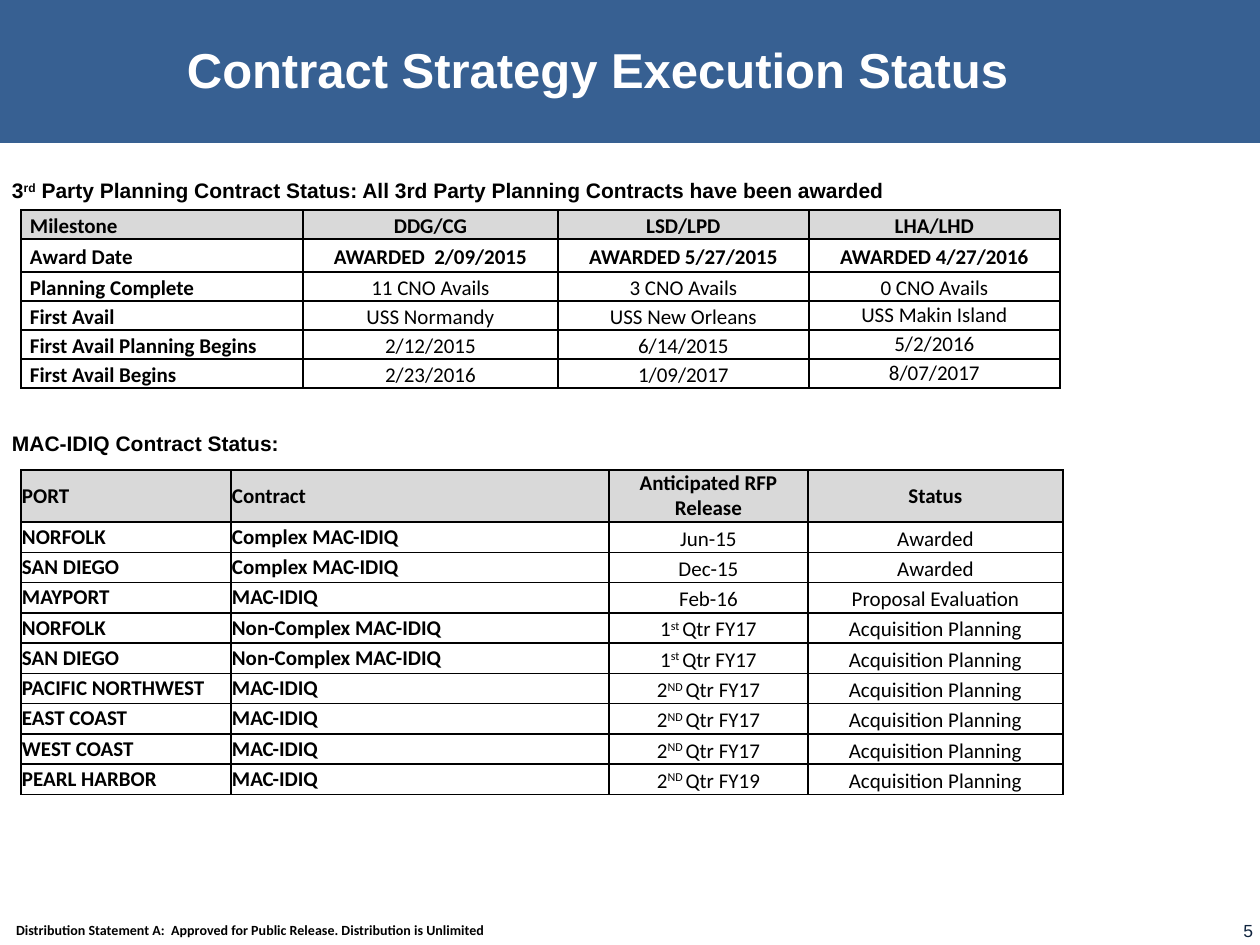
from lxml import etree
from pptx import Presentation
from pptx import util as u
from pptx.dml.color import RGBColor
from pptx.enum import shapes, text
from pptx.oxml.ns import qn

SCALE = 914400 / 126  # EMU per px
BLUE, NAVY, GREY, WHITE, BLACK = "376092", "0F243E", "D9D9D9", "FFFFFF", "000000"
LEFT, CENTER, RIGHT = text.PP_ALIGN.LEFT, text.PP_ALIGN.CENTER, text.PP_ALIGN.RIGHT
TOP, MIDDLE, BOTTOM = text.MSO_ANCHOR.TOP, text.MSO_ANCHOR.MIDDLE, text.MSO_ANCHOR.BOTTOM

PLANNING = [
    ["Milestone", "DDG/CG", "LSD/LPD", "LHA/LHD"],
    ["Award Date", "AWARDED  2/09/2015", "AWARDED 5/27/2015", "AWARDED 4/27/2016"],
    ["Planning Complete", "11 CNO Avails", "3 CNO Avails", "0 CNO Avails"],
    ["First Avail", "USS Normandy", "USS New Orleans", "USS Makin Island"],
    ["First Avail Planning Begins", "2/12/2015", "6/14/2015", "5/2/2016"],
    ["First Avail Begins", "2/23/2016", "1/09/2017", "8/07/2017"],
]
MAC_IDIQ = [
    ["PORT", "Contract", "Anticipated RFP Release", "Status"],
    ["NORFOLK", "Complex MAC-IDIQ", "Jun-15", "Awarded"],
    ["SAN DIEGO", "Complex MAC-IDIQ", "Dec-15", "Awarded"],
    ["MAYPORT", "MAC-IDIQ", "Feb-16", "Proposal Evaluation"],
    ["NORFOLK", "Non-Complex MAC-IDIQ", "1^st ^Qtr FY17", "Acquisition Planning"],
    ["SAN DIEGO", "Non-Complex MAC-IDIQ", "1^st ^Qtr FY17", "Acquisition Planning"],
    ["PACIFIC NORTHWEST", "MAC-IDIQ", "2^ND ^Qtr FY17", "Acquisition Planning"],
    ["EAST COAST", "MAC-IDIQ", "2^ND ^Qtr FY17", "Acquisition Planning"],
    ["WEST COAST", "MAC-IDIQ", "2^ND ^Qtr FY17", "Acquisition Planning"],
    ["PEARL HARBOR", "MAC-IDIQ", "2^ND ^Qtr FY19", "Acquisition Planning"],
]


def px(length):
    return u.Emu(round(length * SCALE))


def color(hex_code):
    return RGBColor.from_string(hex_code)


def write(paragraph, words, size=12, font="Calibri", ink=BLACK, bold=False,
          align=LEFT, spacing=1.0, before=0):
    """Fill a paragraph; words between carets are superscript."""
    paragraph.alignment = align
    paragraph.line_spacing = spacing
    paragraph.space_before = u.Pt(before)
    for i, part in enumerate(words.split("^")):
        run = paragraph.add_run()
        run.text = part
        run.font.size, run.font.name, run.font.bold = u.Pt(size), font, bold
        run.font.color.rgb = color(ink)
        if i % 2:
            run._r.get_or_add_rPr().set("baseline", "30000")


def text_frame(slide, box, inset=(12, 6), anchor=TOP):
    frame = slide.shapes.add_textbox(*map(px, box)).text_frame
    frame.word_wrap = True
    frame.vertical_anchor = anchor
    frame.margin_left = frame.margin_right = px(inset[0])
    frame.margin_top = frame.margin_bottom = px(inset[1])
    return frame


def border(cell):
    properties = cell._tc.get_or_add_tcPr()
    for i, side in enumerate(("a:lnL", "a:lnR", "a:lnT", "a:lnB")):
        line = etree.Element(qn(side), w=str(u.Pt(1)))
        fill = etree.SubElement(line, qn("a:solidFill"))
        etree.SubElement(fill, qn("a:srgbClr"), val=BLACK)
        properties.insert(i, line)


def header(slide, box):
    x, y, width, height = box
    band = slide.shapes.add_shape(shapes.MSO_SHAPE.RECTANGLE, *map(px, box))
    band.shadow.inherit = False
    band.fill.solid()
    band.fill.fore_color.rgb = color(BLUE)
    band.line.fill.background()
    title = text_frame(slide, (x + 178, y + 42, width - 178, 60), inset=(9, 4))
    write(title.paragraphs[0], "Contract Strategy Execution Status", size=28,
          font="Arial", ink=WHITE, bold=True, spacing=0.9)


def headings(slide, box):
    frame = text_frame(slide, box)
    style = dict(font="Arial", bold=True)
    write(frame.paragraphs[0], "3^rd^ Party Planning Contract Status: "
          "All 3rd Party Planning Contracts have been awarded", **style)
    write(frame.add_paragraph(), "MAC-IDIQ Contract Status:", before=130, **style)


def status_table(slide, origin, rows, widths, heights, inset, left_columns,
                 bold_rows, is_spaced):
    """Grey header row, bold left-aligned label columns, centred values."""
    box = (*origin, sum(widths), sum(heights))
    table = slide.shapes.add_table(len(rows), len(widths), *map(px, box)).table
    for column, width in zip(table.columns, widths):
        column.width = px(width)
    for r, (row, height) in enumerate(zip(rows, heights)):
        table.rows[r].height = px(height)
        for c, words in enumerate(row):
            cell = table.cell(r, c)
            cell.margin_left = cell.margin_right = px(inset)
            cell.margin_top = cell.margin_bottom = 0
            cell.vertical_anchor = MIDDLE
            cell.fill.solid()
            cell.fill.fore_color.rgb = color(WHITE if r else GREY)
            border(cell)
            is_label = c < left_columns
            write(cell.text_frame.paragraphs[0], words,
                  bold=is_label or r < bold_rows,
                  align=LEFT if is_label else CENTER,
                  spacing=1.15 if is_spaced(r, c) else 1.0)


def footer(slide, box):
    x, y, width, height = box
    statement = text_frame(slide, (x, y, 1218, height), inset=(16, 6), anchor=BOTTOM)
    write(statement.paragraphs[0], "Distribution Statement A:  Approved for Public "
          "Release. Distribution is Unlimited", size=8, bold=True)
    number = text_frame(slide, (x + width - 121, y + 17, 126, 34))
    write(number.paragraphs[0], "5", size=10, font="Arial", ink=NAVY, align=RIGHT)


def main():
    deck = Presentation()
    deck.slide_width, deck.slide_height = px(1260), px(945)
    slide = deck.slides.add_slide(deck.slide_layouts[6])

    header(slide, (0, 0, 1260, 143))
    headings(slide, (0, 172, 1260, 598))
    # Third-party planning contracts
    status_table(slide, (21, 210), PLANNING, [282, 255, 251, 251],
                 [29, 33] + [29] * 4, inset=9, left_columns=1, bold_rows=2,
                 is_spaced=lambda r, c: r < 3 or c < 3)
    # MAC-IDIQ contracts
    status_table(slide, (21, 470), MAC_IDIQ, [210, 378, 199, 255],
                 [52] + [30.3] * 9, inset=1, left_columns=2, bold_rows=1,
                 is_spaced=lambda r, c: r > 0 and c > 1)
    footer(slide, (0, 897, 1260, 47))

    deck.save("out.pptx")


if __name__ == "__main__":
    main()
